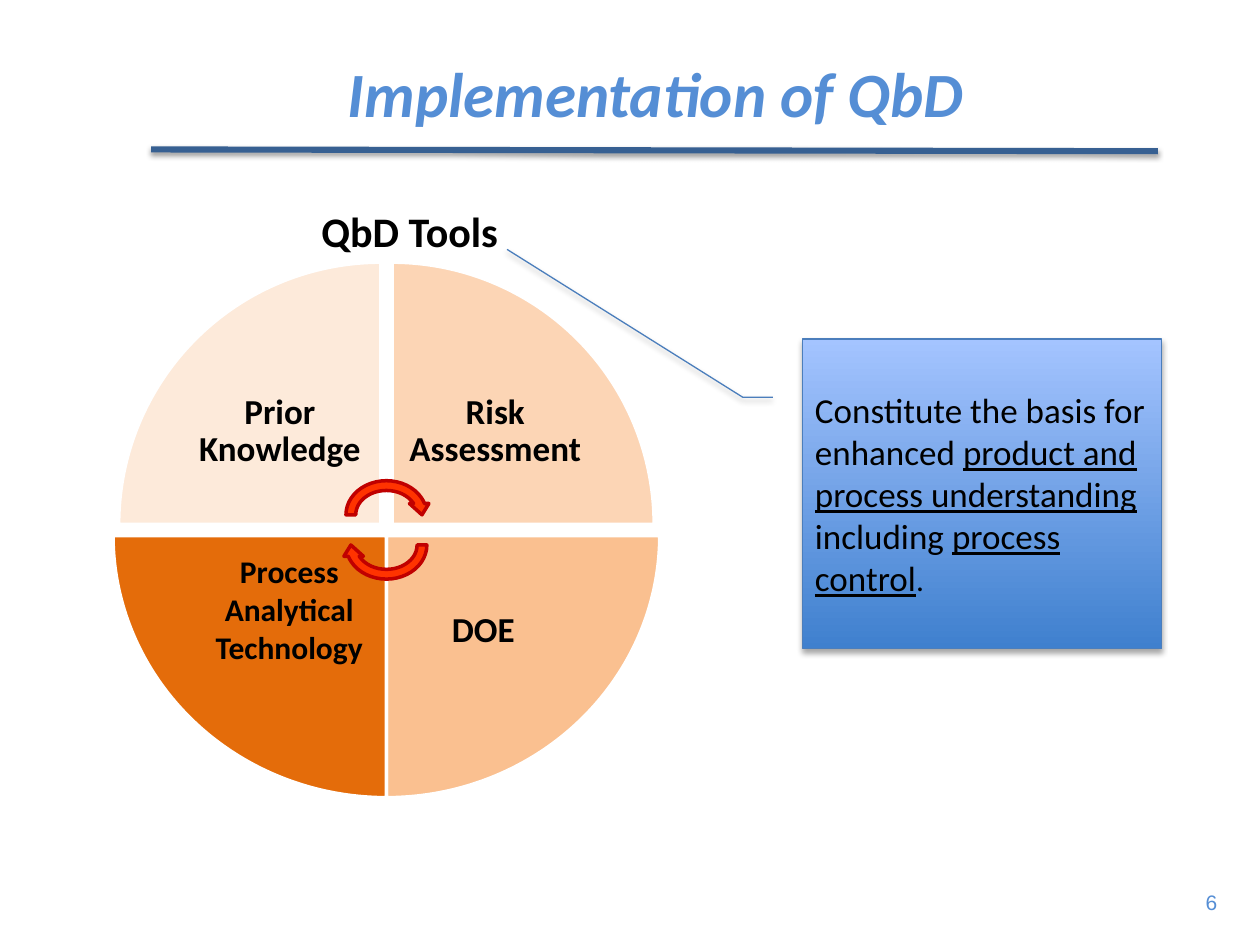
from lxml import etree
from pptx import Presentation
from pptx.dml.color import RGBColor
from pptx.enum.shapes import MSO_CONNECTOR, MSO_SHAPE
from pptx.enum.text import MSO_ANCHOR, PP_ALIGN
from pptx.oxml.ns import qn
from pptx.util import Pt

WEDGE, ARROW, CALLOUT = MSO_SHAPE.PIE_WEDGE, MSO_SHAPE.CIRCULAR_ARROW, MSO_SHAPE.LINE_CALLOUT_2
LEFT, CENTER, RIGHT = PP_ALIGN.LEFT, PP_ALIGN.CENTER, PP_ALIGN.RIGHT
TOP, MIDDLE = MSO_ANCHOR.TOP, MSO_ANCHOR.MIDDLE

BLACK = RGBColor(0x00, 0x00, 0x00)
WHITE = RGBColor(0xFF, 0xFF, 0xFF)
TITLE_BLUE = RGBColor(0x55, 0x8E, 0xD5)
RULE_BLUE = RGBColor(0x37, 0x60, 0x92)
EDGE_BLUE = RGBColor(0x4B, 0x7E, 0xBC)
DEEP_BLUE = RGBColor(0x3F, 0x80, 0xCE)
PALE_BLUE = RGBColor(0xA4, 0xC4, 0xFF)
RED = RGBColor(0xFF, 0x33, 0x00)
DARK_RED = RGBColor(0xC0, 0x00, 0x00)

TITLE = "Implementation of QbD"
WHEEL_TITLE = "QbD Tools"
PAGE_NUMBER = "6"
TOOLS = [
    dict(text="Prior Knowledge", color=RGBColor(0xFD, 0xEA, 0xDA), side=(-1, -1), turn=0,
         width=149.8, gap=3.2, label=115.2, inset=10, size=20, spacing=0.9, lift=0),
    dict(text="Risk Assessment", color=RGBColor(0xFC, 0xD5, 0xB5), side=(1, -1), turn=90,
         width=149.8, gap=3.2, label=118.1, inset=9.5, size=20, spacing=0.9, lift=0),
    dict(text="DOE", color=RGBColor(0xFA, 0xC0, 0x90), side=(1, 1), turn=180,
         width=156.2, gap=0, label=110.9, inset=11.5, size=20, spacing=1, lift=0),
    dict(text="Process Analytical Technology", color=RGBColor(0xE4, 0x6C, 0x0A), side=(-1, 1), turn=270,
         width=156.2, gap=0, label=110.9, inset=10, size=18, spacing=1, lift=22),
]
CALLOUT_SPANS = [
    ("Constitute the basis for enhanced ", False, 20),
    ("product and process understanding ", True, 20),
    ("including ", False, 20),
    ("process control", True, 20),
    (".", False, 18),
]
CALLOUT_TAIL = [0.188, -0.083, 0.188, -0.167, -0.289, -0.823]

HUB_X, HUB_Y = 220.8, 302.8
WEDGE_HEIGHT, ROW_GAP, LABEL_HEIGHT = 149.8, 3.2, 105.8
ARROW_WIDTH, ARROW_HEIGHT, ARROW_OFFSET = 51.8, 44.6, 8.6


def add_text(page, frame, text, size, color=BLACK, align=LEFT, anchor=TOP, font="Calibri",
             bold=True, italic=False, insets=(7.2, 3.6, 7.2, 3.6), spacing=1):
    box = page.shapes.add_textbox(*map(Pt, frame)).text_frame
    box.word_wrap = True
    box.vertical_anchor = anchor
    box.margin_left, box.margin_top, box.margin_right, box.margin_bottom = map(Pt, insets)
    para = box.paragraphs[0]
    para.text = text
    para.alignment = align
    para.line_spacing = spacing
    para.font.name, para.font.size = font, Pt(size)
    para.font.bold, para.font.italic = bold, italic
    para.font.color.rgb = color


def add_solid(page, kind, center_x, center_y, width, height, turn, fill, line):
    shape = page.shapes.add_shape(
        kind, Pt(center_x - width / 2), Pt(center_y - height / 2), Pt(width), Pt(height))
    shape.rotation = turn
    shape.shadow.inherit = False
    shape.fill.solid()
    shape.fill.fore_color.rgb = fill
    shape.line.color.rgb = line
    shape.line.width = Pt(2)


def add_shadow(shape, opacity, distance):
    effects = etree.SubElement(shape._element.spPr, qn("a:effectLst"))
    shadow = etree.SubElement(effects, qn("a:outerShdw"), blurRad=str(Pt(3.1)),
                              dist=str(Pt(distance)), dir="5400000", rotWithShape="0")
    color = etree.SubElement(shadow, qn("a:srgbClr"), val="000000")
    etree.SubElement(color, qn("a:alpha"), val=str(opacity * 1000))


def inner_start(hub, side, gap, length):
    return hub + gap if side > 0 else hub - gap - length


def add_wheel(page):
    for tool in TOOLS:
        side_x, side_y = tool["side"]
        center_x = HUB_X + side_x * (tool["gap"] + tool["width"] / 2)
        center_y = HUB_Y + side_y * (ROW_GAP + WEDGE_HEIGHT / 2)
        width, height = tool["width"], WEDGE_HEIGHT
        if tool["turn"] % 180:
            width, height = height, width
        add_solid(page, WEDGE, center_x, center_y, width, height, tool["turn"], tool["color"], WHITE)
        inset = tool["inset"]
        frame = (inner_start(HUB_X, side_x, tool["gap"], tool["label"]),
                 inner_start(HUB_Y, side_y, ROW_GAP, LABEL_HEIGHT), tool["label"], LABEL_HEIGHT)
        add_text(page, frame, tool["text"], tool["size"], align=CENTER, anchor=MIDDLE,
                 insets=(inset, inset, inset, inset + tool["lift"]), spacing=tool["spacing"])
    for side, turn in ((-1, 0), (1, 180)):
        add_solid(page, ARROW, HUB_X, HUB_Y + side * ARROW_OFFSET, ARROW_WIDTH, ARROW_HEIGHT,
                  turn, RED, DARK_RED)


def add_rule(page):
    rule = page.shapes.add_connector(MSO_CONNECTOR.STRAIGHT, Pt(86.4), Pt(85.4), Pt(661.7), Pt(86.4))
    rule.line.color.rgb = RULE_BLUE
    rule.line.width = Pt(3.5)
    add_shadow(rule, 38, 1.6)


def add_callout(page):
    callout = page.shapes.add_shape(CALLOUT, Pt(458.6), Pt(193.7), Pt(205.2), Pt(177.1))
    for index, value in enumerate(CALLOUT_TAIL):
        callout.adjustments[index] = value
    callout.fill.gradient()
    callout.fill.gradient_angle = 90
    for stop, color in zip(callout.fill.gradient_stops, (DEEP_BLUE, PALE_BLUE)):
        stop.color.rgb = color
    callout.line.color.rgb = EDGE_BLUE
    callout.line.width = Pt(0.75)
    add_shadow(callout, 35, 1.8)
    callout.text_frame.word_wrap = True
    callout.text_frame.vertical_anchor = MIDDLE
    para = callout.text_frame.paragraphs[0]
    para.alignment = LEFT
    for text, underline, size in CALLOUT_SPANS:
        span = para.add_run()
        span.text = text
        span.font.name, span.font.size = "Calibri", Pt(size)
        span.font.underline = underline
        span.font.color.rgb = BLACK


def main():
    deck = Presentation()
    deck.slide_width, deck.slide_height = Pt(720), Pt(540)
    page = deck.slides.add_slide(deck.slide_layouts[6])
    add_text(page, (673.2, 504.7, 29.5, 21.6), PAGE_NUMBER, 12, TITLE_BLUE, RIGHT,
             font="Arial", bold=False)
    add_text(page, (39.6, 16.6, 670.3, 72.7), TITLE, 36, TITLE_BLUE, CENTER, MIDDLE, italic=True)
    add_wheel(page)
    add_rule(page)
    add_text(page, (140.4, 113.8, 152.6, 36), WHEEL_TITLE, 24, insets=(43.2, 3.6, 0, 3.6))
    add_callout(page)
    deck.save("out.pptx")


if __name__ == "__main__":
    main()
